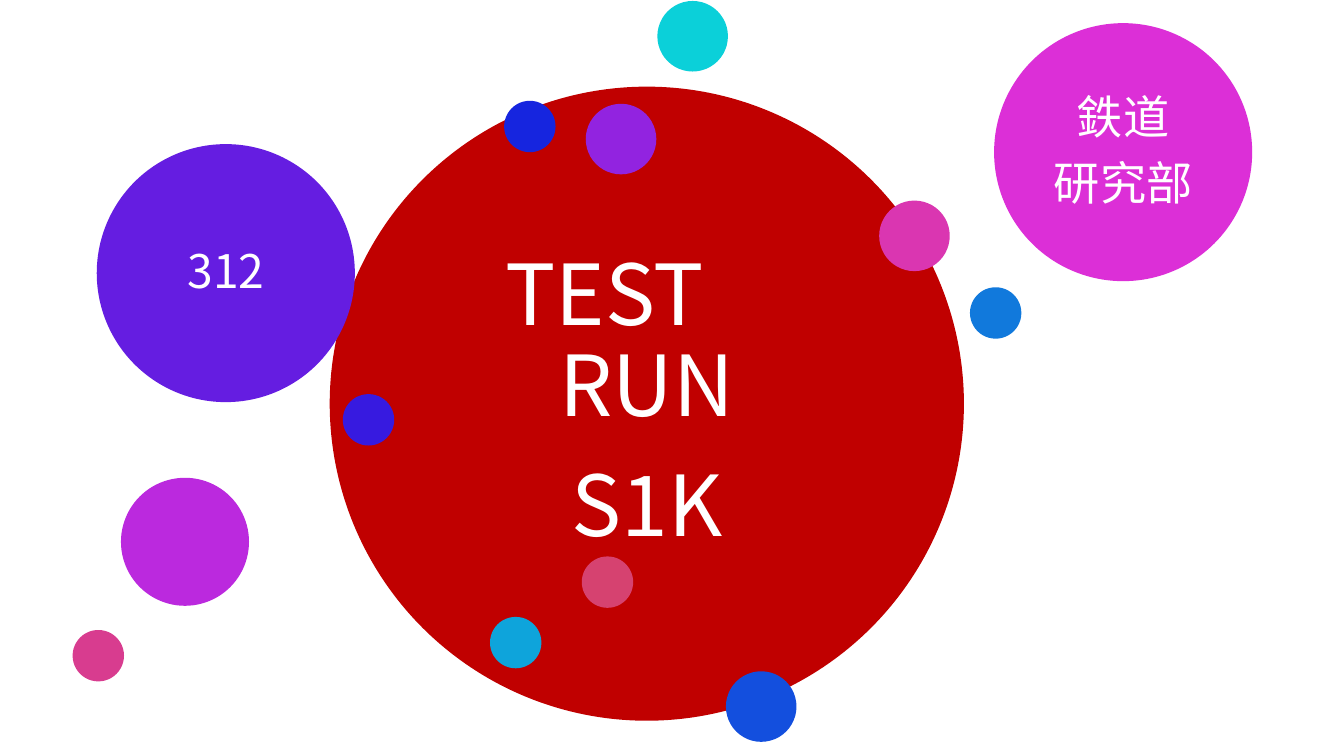
from lxml import etree
from pptx import Presentation, util as u
from pptx.dml.color import RGBColor
from pptx.enum import shapes, text
from pptx.oxml.ns import qn

FONT = "Noto Sans CJK JP"
SMALL, MEDIUM, LARGE, HUB = 0.51, 0.7, 2.56, 6.29

BUBBLES = [
    (6.52, 0.01, MEDIUM, "0BD0D9"),
    (4.86, 6.12, SMALL, "0EA4DB"),
    (9.62, 2.85, SMALL, "1179DC"),
    (7.2, 6.66, MEDIUM, "134FDE"),
    (5, 1, SMALL, "1625DF"),
    (3.4, 3.91, SMALL, "371AE0"),
    (5.81, 1.03, MEDIUM, "9223E0"),
    (1.2, 4.74, 1.27, "BB29DE"),
    (8.72, 1.99, MEDIUM, "DA36B1"),
    (0.72, 6.25, SMALL, "D83C8F"),
    (5.77, 5.52, SMALL, "D64270"),
]


def color(value):
    """Turn a hex string into a colour."""
    return RGBColor.from_string(value)


def add_circle(slide, left, top, diameter, fill):
    """Draw a plain filled circle."""
    circle = slide.shapes.add_shape(
        shapes.MSO_SHAPE.OVAL, *map(u.Inches, (left, top, diameter, diameter)))
    circle.shadow.inherit = False
    circle.fill.solid()
    circle.fill.fore_color.rgb = color(fill)
    circle.line.fill.background()


def write_label(label, lines, size, inset):
    """Fill a label with centred white lines."""
    frame = label.text_frame
    frame.text = "\n".join(lines)
    frame.word_wrap = True
    frame.auto_size = text.MSO_AUTO_SIZE.NONE
    frame.vertical_anchor = text.MSO_ANCHOR.MIDDLE
    frame.margin_left = frame.margin_right = u.Inches(inset)
    frame.margin_top = frame.margin_bottom = u.Inches(inset)
    for line in frame.paragraphs:
        line.alignment = text.PP_ALIGN.CENTER
        line.line_spacing = 0.9
        line.space_before = u.Pt(0)
        line.space_after = u.Pt(size * 0.35)
        line.font.size = u.Pt(size)
        line.font.color.rgb = color("FFFFFF")
        line.font.name = FONT
        defaults = line._p.pPr.find(qn("a:defRPr"))
        etree.SubElement(defaults, qn("a:ea"), typeface=FONT)


def inner_square(left, top, diameter):
    """Return the square inscribed in a circle as left, top, width, height."""
    side = diameter / 2 ** 0.5
    margin = (diameter - side) / 2
    return [u.Inches(n) for n in (left + margin, top + margin, side, side)]


def add_hub(slide, left, top, diameter, lines):
    """Draw the central circle with the slide title on it."""
    add_circle(slide, left, top, diameter, "C00000")
    title = slide.shapes.title
    slide.shapes._spTree.append(title._element)
    title.left, title.top, title.width, title.height = inner_square(left, top, diameter)
    write_label(title, lines, 60, 0.25)


def add_satellite(slide, left, top, diameter, fill, lines):
    """Draw an outer circle with its label."""
    add_circle(slide, left, top, diameter, fill)
    label = slide.shapes.add_textbox(*inner_square(left, top, diameter))
    write_label(label, lines, 33, 0.14)


def main():
    """Build and save the slide."""
    deck = Presentation()
    deck.slide_width, deck.slide_height = u.Inches(13.33), u.Inches(7.5)
    slide = deck.slides.add_slide(deck.slide_layouts[5])
    add_hub(slide, 3.27, 0.86, HUB, ["TEST　RUN", "S1K"])
    add_satellite(slide, 0.96, 1.43, LARGE, "651DE1", ["312"])
    add_satellite(slide, 9.86, 0.23, LARGE, "DC2FD7", ["鉄道", "研究部"])
    for bubble in BUBBLES:
        add_circle(slide, *bubble)
    deck.save("out.pptx")


if __name__ == "__main__":
    main()
